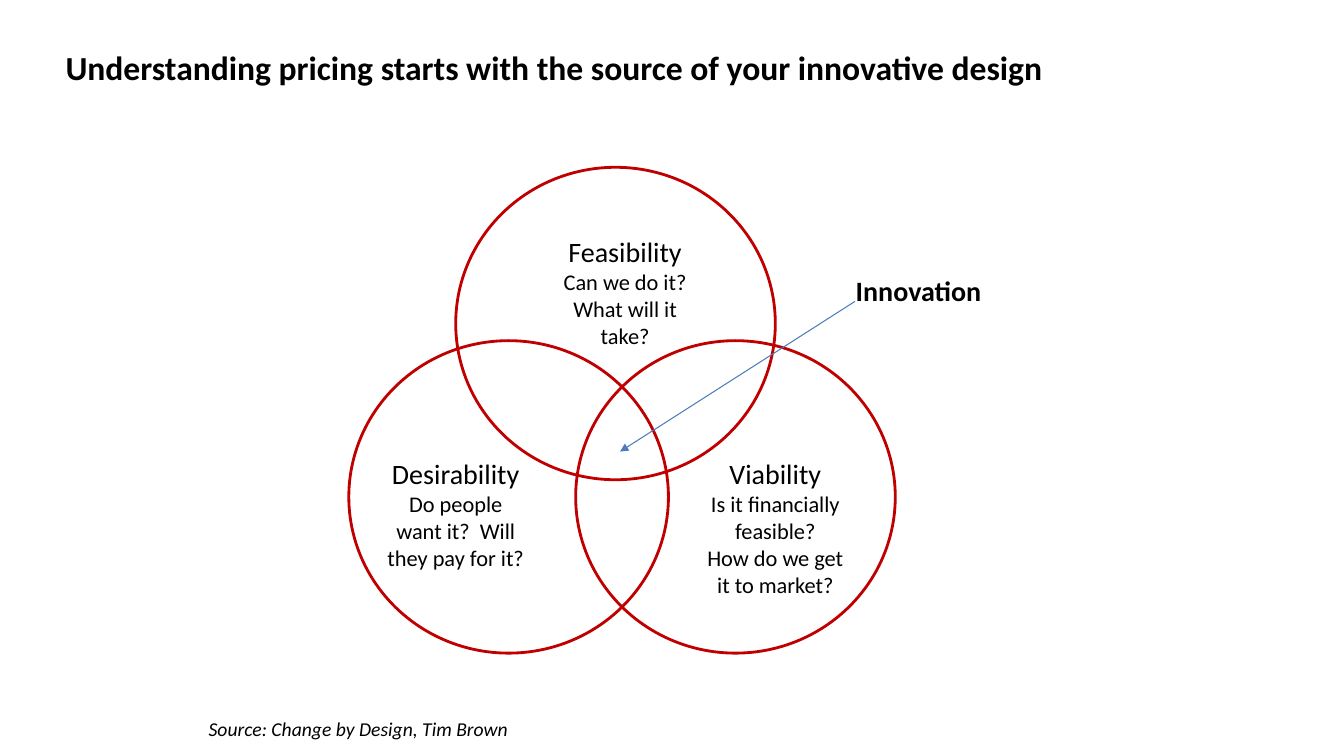
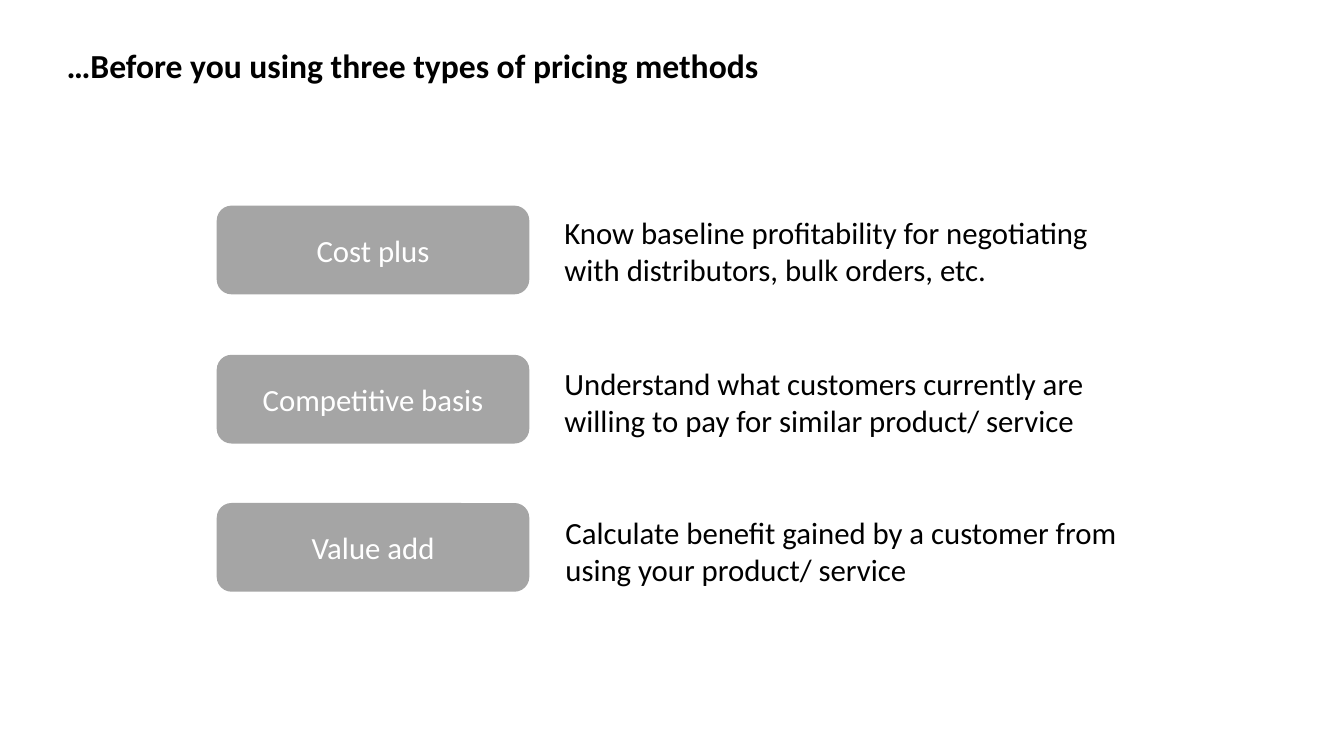
"""Build two slides on the sources of innovation and on pricing methods."""
from lxml.etree import SubElement
from pptx import Presentation
from pptx.dml.color import RGBColor
from pptx.enum.shapes import MSO_CONNECTOR, MSO_SHAPE
from pptx.enum.text import MSO_ANCHOR, MSO_AUTO_SIZE, PP_ALIGN
from pptx.oxml.ns import qn
from pptx.util import Pt

PX = 9144
SLIDE_SIZE = (1333, 750)
FONT = "Calibri"
COLORS = {
    "text": "000000",
    "ring": "C00000",
    "arrow": "4A7DBA",
    "method": "A5A5A5",
    "method_text": "FFFFFF",
}
TITLE_SIZE, HEADING_SIZE, QUESTION_SIZE, SOURCE_SIZE, METHOD_SIZE = 24, 20, 16, 14, 22

VENN_TITLE = ("Understanding pricing starts with the source of your innovative design", (55, 42))
RING_SIZE = (317, 310)
LENSES = [
    {"heading": "Desirability", "ring": (346, 338), "label": (373, 448, 158, 125),
     "questions": ["Do people want it?  Will they pay for it?"]},
    {"heading": "Feasibility", "ring": (452, 166), "label": (541, 228, 158, 125),
     "questions": ["Can we do it? What will it take?"]},
    {"heading": "Viability", "ring": (571, 338), "label": (690, 448, 158, 151),
     "questions": ["Is it financially feasible?", "How do we get it to market?"]},
]
SOURCE = ("Source: Change by Design, Tim Brown", (197, 706, 521, 34))
OVERLAP = ("Innovation", (832, 266, 158, 44))
OVERLAP_ARROW = (848, 299, 615, 448)

METHODS_TITLE = ("…Before you using three types of pricing methods", (56, 40))
TITLE_BOX = (1243, 50)
METHOD_BOX = (215, 204, 310, 88)
METHOD_PITCH = 147.5
METHODS = [
    ("Cost plus", "Know baseline profitability for negotiating with distributors, bulk orders, etc.",
     (550, 207, 556, 84)),
    ("Competitive basis", "Understand what customers currently are willing to pay for similar product/ service",
     (550, 357, 556, 84)),
    ("Value add", "Calculate benefit gained by a customer from using your product/ service",
     (551, 505, 567, 84)),
]


def emu(*lengths):
    return [round(length * PX) for length in lengths]


def color(key):
    return RGBColor.from_string(COLORS[key])


def write(frame, lines, align=PP_ALIGN.LEFT, ink="text", bold=False, italic=False):
    frame.word_wrap = True
    for index, (words, size) in enumerate(lines):
        paragraph = frame.add_paragraph() if index else frame.paragraphs[0]
        paragraph.alignment = align
        run = paragraph.add_run()
        run.text = words
        run.font.name = FONT
        run.font.size = Pt(size)
        run.font.bold = bold
        run.font.italic = italic
        run.font.color.rgb = color(ink)


def add_text(slide, box, lines, **style):
    write(slide.shapes.add_textbox(*emu(*box)).text_frame, lines, **style)


def add_titled_slide(deck, words, corner):
    slide = deck.slides.add_slide(deck.slide_layouts[5])
    title = slide.shapes.title
    title.left, title.top, title.width, title.height = emu(*corner, *TITLE_BOX)
    title.text_frame.auto_size = MSO_AUTO_SIZE.NONE
    title.text_frame.vertical_anchor = MSO_ANCHOR.TOP
    write(title.text_frame, [(words, TITLE_SIZE)], bold=True)
    return slide


def add_ring(slide, corner):
    ring = slide.shapes.add_shape(MSO_SHAPE.FLOWCHART_CONNECTOR, *emu(*corner, *RING_SIZE))
    ring.shadow.inherit = False
    ring.fill.background()
    ring.line.color.rgb = color("ring")
    ring.line.width = Pt(2)


def add_arrow(slide, ends):
    arrow = slide.shapes.add_connector(MSO_CONNECTOR.STRAIGHT, *emu(*ends))
    arrow.line.color.rgb = color("arrow")
    arrow.line.width = Pt(0.75)
    SubElement(arrow.line._get_or_add_ln(), qn("a:tailEnd"), type="triangle")
    SubElement(arrow._element.spPr, qn("a:effectLst"))


def add_method(slide, name, row):
    left, top, width, height = METHOD_BOX
    box = emu(left, top + round(row * METHOD_PITCH), width, height)
    method = slide.shapes.add_shape(MSO_SHAPE.ROUNDED_RECTANGLE, *box)
    method.shadow.inherit = False
    method.fill.solid()
    method.fill.fore_color.rgb = color("method")
    method.line.fill.background()
    method.text_frame.vertical_anchor = MSO_ANCHOR.MIDDLE
    write(method.text_frame, [(name, METHOD_SIZE)], align=PP_ALIGN.CENTER, ink="method_text")


def build_venn(deck):
    slide = add_titled_slide(deck, *VENN_TITLE)
    for lens in LENSES:
        add_ring(slide, lens["ring"])
    for lens in LENSES:
        lines = [(lens["heading"], HEADING_SIZE)]
        lines += [(question, QUESTION_SIZE) for question in lens["questions"]]
        add_text(slide, lens["label"], lines, align=PP_ALIGN.CENTER)
    source, source_box = SOURCE
    add_text(slide, source_box, [(source, SOURCE_SIZE)], italic=True)
    overlap, overlap_box = OVERLAP
    add_text(slide, overlap_box, [(overlap, HEADING_SIZE)], align=PP_ALIGN.CENTER, bold=True)
    add_arrow(slide, OVERLAP_ARROW)


def build_methods(deck):
    slide = add_titled_slide(deck, *METHODS_TITLE)
    for row, (name, purpose, purpose_box) in enumerate(METHODS):
        add_method(slide, name, row)
        add_text(slide, purpose_box, [(purpose, METHOD_SIZE)])


def main():
    deck = Presentation()
    deck.slide_width, deck.slide_height = emu(*SLIDE_SIZE)
    build_venn(deck)
    build_methods(deck)
    deck.save("out.pptx")


if __name__ == "__main__":
    main()
